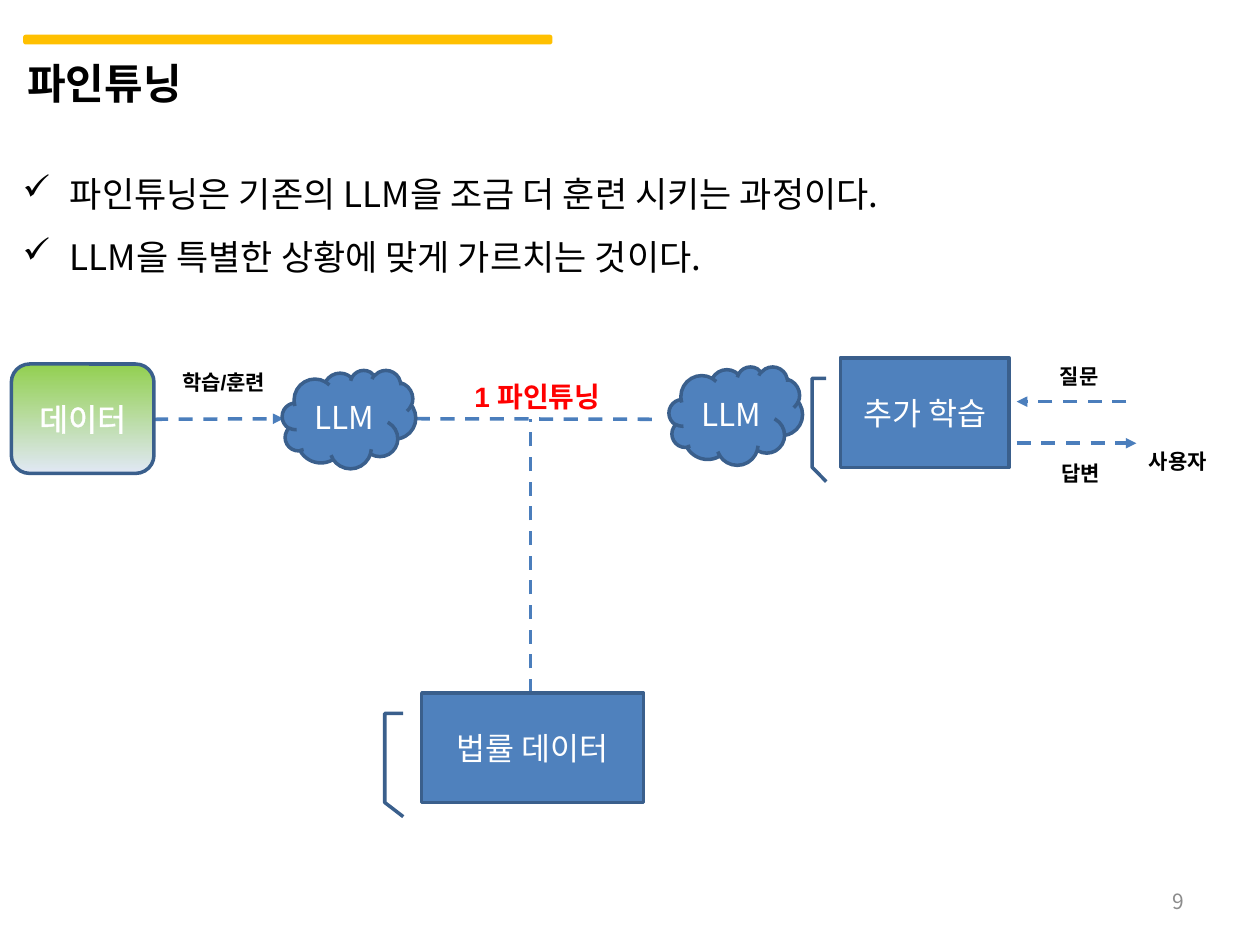
from dataclasses import dataclass
from typing import Optional

from lxml.etree import SubElement
from pptx import Presentation
from pptx.dml.color import RGBColor
from pptx.enum.dml import MSO_LINE
from pptx.enum.shapes import MSO_CONNECTOR, MSO_SHAPE
from pptx.enum.text import MSO_ANCHOR, PP_ALIGN
from pptx.oxml.ns import qn
from pptx.util import Pt

KOREAN_FONT = "Noto Sans CJK KR"
BLACK, WHITE, RED, GREY = "000000", "FFFFFF", "FF0000", "8C8C8C"
YELLOW, BLUE, DARK_BLUE, ARROW_BLUE = "FFC000", "4F81BD", "3A5F8C", "4B7EBC"


@dataclass(frozen=True)
class Node:
    text: str
    kind: MSO_SHAPE
    left: float
    top: float
    width: float
    height: float
    gradient: Optional[tuple[str, str]] = None


@dataclass(frozen=True)
class Label:
    text: str
    left: float
    top: float
    width: float
    height: float
    size: float = 12
    color: str = BLACK
    font: str = "Arial"
    align: PP_ALIGN = PP_ALIGN.CENTER


@dataclass(frozen=True)
class Link:
    start: tuple[float, float]
    end: tuple[float, float]
    arrow: bool = False


NODES = [
    Node("데이터", MSO_SHAPE.ROUNDED_RECTANGLE, 6.5, 208, 81.5, 62.5, ("92D050", "E1E8F5")),
    Node("LLM", MSO_SHAPE.CLOUD, 382.3, 209.5, 76.3, 56.2),
    Node("추가 학습", MSO_SHAPE.LINE_CALLOUT_3, 480.2, 204.5, 96.5, 62.6),
    Node("LLM", MSO_SHAPE.CLOUD, 161.3, 211.5, 76.3, 56.2),
    Node("법률 데이터", MSO_SHAPE.LINE_CALLOUT_3, 241, 396, 126.7, 62.6),
]

LABELS = [
    Label("사용자", 649.4, 252.7, 50.4, 22.3, font=KOREAN_FONT, align=PP_ALIGN.LEFT),
    Label("1 파인튜닝", 257.8, 213.1, 98.6, 26.6, size=16, color=RED),
    Label("학습/훈련", 87.8, 207.4, 80, 21.6),
    Label("질문", 576.7, 204.5, 80, 21.6),
    Label("답변", 577.4, 259.9, 80, 21.6),
]

LINKS = [
    Link((237.6, 239.3), (373.7, 239.6)),
    Link((303.1, 396), (303.1, 239.6)),
    Link((88, 239.6), (162, 239.3), arrow=True),
    Link((643.7, 229.5), (581, 229.5), arrow=True),
    Link((581, 253.3), (649.4, 253.3), arrow=True),
]


def rgb(color: str) -> RGBColor:
    return RGBColor.from_string(color)


def write(para, text: str, *, size: float, color: str = BLACK, font: str = KOREAN_FONT,
          bold: bool = False, align: PP_ALIGN = PP_ALIGN.LEFT, outline: Optional[str] = None):
    """Add one formatted run, with the Korean font for East Asian letters."""
    para.alignment = align
    span = para.add_run()
    span.text = text
    span.font.size = Pt(size)
    span.font.bold = bold
    span.font.name = font
    span.font.color.rgb = rgb(color)
    properties = span.font._element
    latin = properties.find(qn("a:latin"))
    east_asian = properties.makeelement(qn("a:ea"), {"typeface": KOREAN_FONT})
    latin.addnext(east_asian)
    if outline:
        line = properties.makeelement(qn("a:ln"), {"w": str(Pt(1.45))})
        fill = SubElement(line, qn("a:solidFill"))
        SubElement(fill, qn("a:srgbClr"), val=outline)
        properties.insert(0, line)


def add_box(page, left: float, top: float, width: float, height: float,
            anchor: MSO_ANCHOR = MSO_ANCHOR.TOP):
    box = page.shapes.add_textbox(Pt(left), Pt(top), Pt(width), Pt(height))
    box.text_frame.word_wrap = True
    box.text_frame.vertical_anchor = anchor
    return box.text_frame


def add_shape(page, kind: MSO_SHAPE, left: float, top: float, width: float, height: float,
              fill: str, line: str):
    shape = page.shapes.add_shape(kind, Pt(left), Pt(top), Pt(width), Pt(height))
    shape.shadow.inherit = False
    shape.fill.solid()
    shape.fill.fore_color.rgb = rgb(fill)
    shape.line.color.rgb = rgb(line)
    shape.line.width = Pt(2)
    return shape


def draw_node(page, node: Node) -> None:
    shape = add_shape(page, node.kind, node.left, node.top, node.width, node.height,
                      BLUE, DARK_BLUE)
    if node.gradient:
        shape.fill.gradient()
        shape.fill.gradient_angle = 270
        for stop, color in zip(shape.fill.gradient_stops, node.gradient):
            stop.color.rgb = rgb(color)
    frame = shape.text_frame
    frame.vertical_anchor = MSO_ANCHOR.MIDDLE
    write(frame.paragraphs[0], node.text, size=18, color=WHITE, align=PP_ALIGN.CENTER,
          outline=WHITE if node.gradient else None)


def draw_label(page, label: Label) -> None:
    frame = add_box(page, label.left, label.top, label.width, label.height)
    write(frame.paragraphs[0], label.text, size=label.size, color=label.color,
          font=label.font, bold=True, align=label.align)


def draw_link(page, link: Link) -> None:
    connector = page.shapes.add_connector(
        MSO_CONNECTOR.STRAIGHT, *(Pt(value) for value in link.start + link.end))
    connector.line.color.rgb = rgb(ARROW_BLUE)
    connector.line.width = Pt(2)
    connector.line.dash_style = MSO_LINE.DASH
    if link.arrow:
        SubElement(connector.line._get_or_add_ln(), qn("a:tailEnd"), type="triangle")
    SubElement(connector._element.spPr, qn("a:effectLst"))


def draw_bullets(page, lines: list[str]) -> None:
    frame = add_box(page, 5.8, 88.6, 692.6, 67.7, MSO_ANCHOR.MIDDLE)
    for index, text in enumerate(lines):
        para = frame.add_paragraph() if index else frame.paragraphs[0]
        properties = para._p.get_or_add_pPr()
        properties.set("marL", str(Pt(27)))
        properties.set("indent", str(Pt(-27)))
        SubElement(properties, qn("a:buChar"), char="✓")
        para.line_spacing = 1.5
        write(para, text, size=20)


def main() -> None:
    deck = Presentation()
    deck.slide_width, deck.slide_height = Pt(720), Pt(540)
    page = deck.slides.add_slide(deck.slide_layouts[6])

    add_shape(page, MSO_SHAPE.ROUNDED_RECTANGLE, 14.2, 20.8, 300.5, 3.6, YELLOW, YELLOW)
    title = add_box(page, 8.6, 29.5, 311.8, 36)
    write(title.paragraphs[0], "파인튜닝", size=24, bold=True)
    number = add_box(page, 516.2, 500.4, 167.8, 28.8, MSO_ANCHOR.MIDDLE)
    write(number.paragraphs[0], "9", size=12, color=GREY, align=PP_ALIGN.RIGHT)

    for link in LINKS:
        draw_link(page, link)
    for node in NODES:
        draw_node(page, node)
    for label in LABELS:
        draw_label(page, label)
    draw_bullets(page, [
        "파인튜닝은 기존의 LLM을 조금 더 훈련 시키는 과정이다.",
        "LLM을 특별한 상황에 맞게 가르치는 것이다.",
    ])
    deck.save("out.pptx")


if __name__ == "__main__":
    main()
